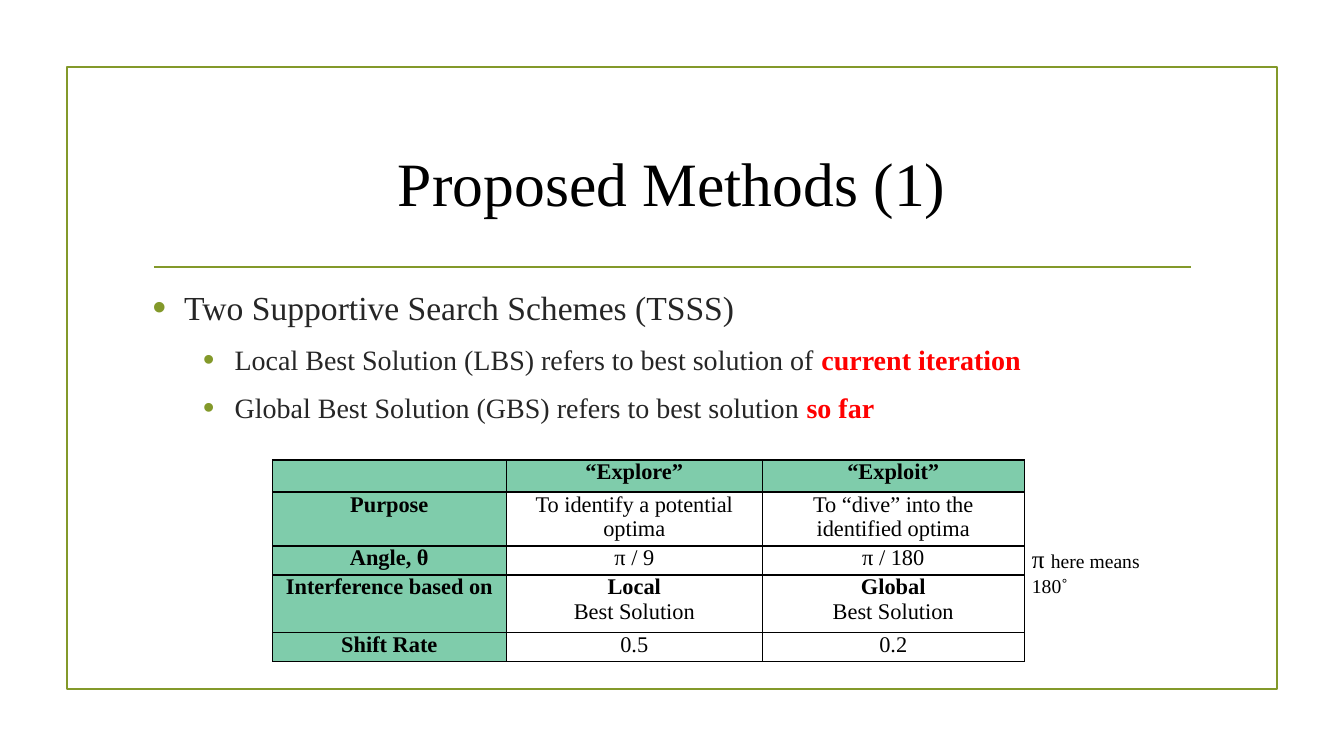
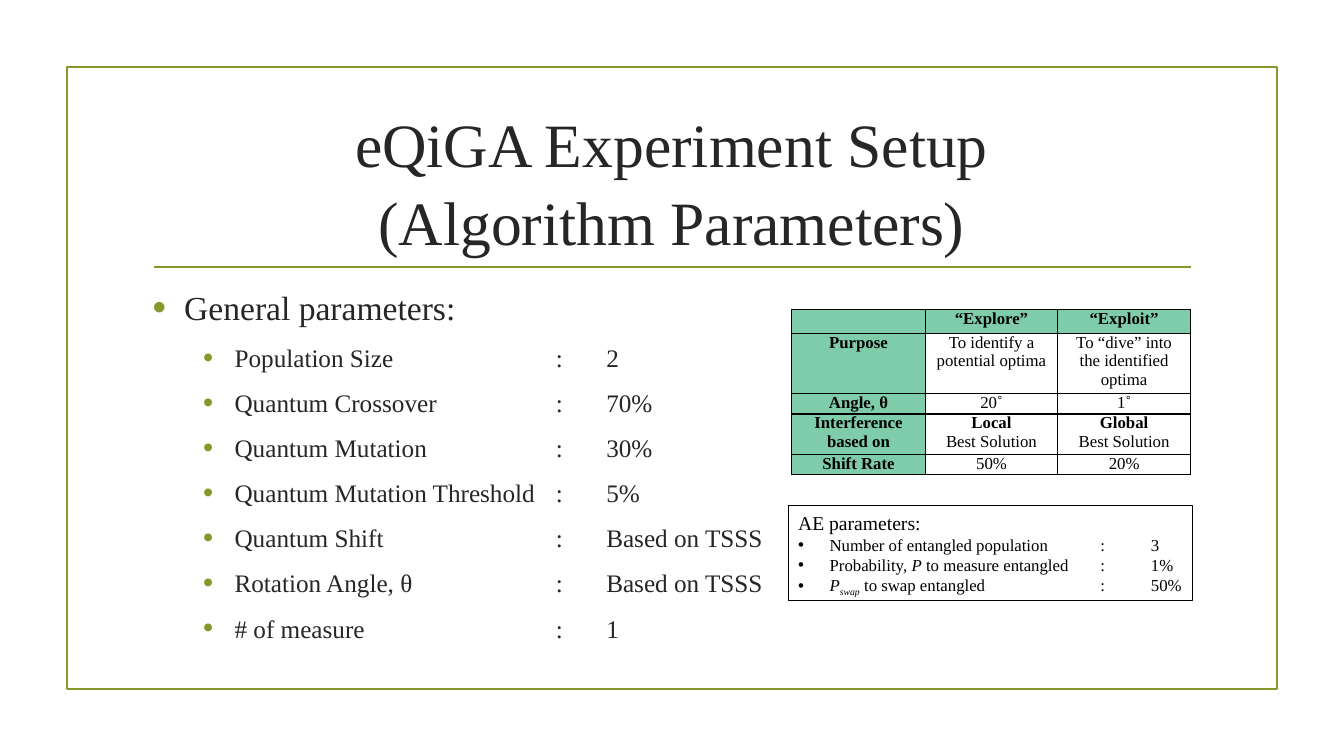
"""Builds two slides on search schemes and experiment settings."""
from lxml import etree
from pptx import Presentation
from pptx.dml.color import RGBColor
from pptx.enum.shapes import MSO_CONNECTOR, MSO_SHAPE
from pptx.enum.text import MSO_ANCHOR, PP_ALIGN
from pptx.oxml.ns import qn
from pptx.util import Pt

OLIVE = RGBColor(0x83, 0x99, 0x2A)
BLACK = RGBColor(0, 0, 0)
DARK = RGBColor(0x26, 0x26, 0x26)
RED = RGBColor(255, 0, 0)
MINT = RGBColor(0x7F, 0xCC, 0xAB)
FACE = "Times New Roman"
CENTER, LEFT = PP_ALIGN.CENTER, PP_ALIGN.LEFT
MIDDLE, TOP = MSO_ANCHOR.MIDDLE, MSO_ANCHOR.TOP
RECT, STRAIGHT = MSO_SHAPE.RECTANGLE, MSO_CONNECTOR.STRAIGHT
STEP = 22.5
BOLD, ITALIC = {"bold": True}, {"italic": True}
ALERT = {"bold": True, "color": RED}


def sub(root, tag, **attrs):
    node = etree.SubElement(root, qn(tag))
    for key, val in attrs.items():
        node.set(key, str(val))
    return node


class Deck:
    def __init__(self):
        self.prs = Presentation()
        self.prs.slide_width, self.prs.slide_height = Pt(960), Pt(540)
        self.slide = None

    def page(self, title, color):
        self.slide = self.prs.slides.add_slide(self.prs.slide_layouts[6])
        self.frame(48, 48, 864, 444, OLIVE, 1.25)
        rule = self.slide.shapes.add_connector(
            STRAIGHT, Pt(110), Pt(190.8), Pt(850.5), Pt(190.8))
        rule.line.color.rgb, rule.line.width = OLIVE, Pt(1.25)
        sub(rule._element.spPr, "a:effectLst")
        para = self.text(102, 77, 756, 103, MIDDLE).paragraphs[0]
        para.line_spacing = 1.05
        self.fill(para, [title], 44, color, CENTER)

    def frame(self, x, y, w, h, color, width):
        box = self.slide.shapes.add_shape(RECT, Pt(x), Pt(y), Pt(w), Pt(h))
        box.shadow.inherit = False
        box.fill.background()
        box.line.color.rgb, box.line.width = color, Pt(width)
        box.text_frame.vertical_anchor = TOP
        return box.text_frame

    def text(self, x, y, w, h, anchor=TOP):
        box = self.slide.shapes.add_textbox(Pt(x), Pt(y), Pt(w), Pt(h))
        box.text_frame.word_wrap = True
        box.text_frame.vertical_anchor = anchor
        return box.text_frame

    def fill(self, para, parts, size, color, align=LEFT, bold=None):
        para.alignment = align
        font = para.font
        font.name, font.size, font.color.rgb = FACE, Pt(size), color
        font.bold = bold
        for part in parts:
            words, look = (part, {}) if isinstance(part, str) else part
            for i, line in enumerate(words.split("\n")):
                if i:
                    para.add_line_break()
                if line:
                    self.style(para.add_run(), line, **look)

    def style(self, run, words, bold=None, italic=None, color=None,
              size=None, base=None):
        run.text = words
        run.font.bold, run.font.italic = bold, italic
        if color is not None:
            run.font.color.rgb = color
        if size:
            run.font.size = Pt(size)
        if base:
            run._r.get_or_add_rPr().set("baseline", str(base))

    def bullet(self, para, left, color=None, scale=100):
        ppr = para._p.get_or_add_pPr()
        ppr.set("marL", str(Pt(left)))
        ppr.set("indent", str(-Pt(STEP)))
        if color is not None:
            sub(sub(ppr, "a:buClr"), "a:srgbClr", val=color)
        sub(ppr, "a:buSzPct", val=scale * 1000)
        sub(ppr, "a:buFont", typeface="Arial")
        sub(ppr, "a:buChar", char="•")

    def body(self, head, items, size):
        frame = self.text(102, 201.6, 756, 261.4)
        para = frame.paragraphs[0]
        self.bullet(para, STEP, OLIVE, 115)
        para.space_after = Pt(6)
        self.fill(para, [head], 24, DARK)
        for item in items:
            para = frame.add_paragraph()
            self.bullet(para, STEP + 36, OLIVE, 115)
            para.space_before, para.space_after = Pt(4.6), Pt(6)
            self.fill(para, item, size, DARK)

    def panel(self, head, items):
        frame = self.frame(563, 361.4, 288.7, 67.7, BLACK, 0.75)
        frame.word_wrap = True
        self.fill(frame.paragraphs[0], [head], 14, BLACK)
        for item in items:
            para = frame.add_paragraph()
            self.bullet(para, STEP)
            self.fill(para, item, 12, BLACK)

    def table(self, x, y, cols, rows, size, data):
        grid = self.slide.shapes.add_table(
            len(rows), len(cols), Pt(x), Pt(y),
            Pt(sum(cols)), Pt(sum(rows))).table
        grid.first_row = grid.horz_banding = False
        for col, width in zip(grid.columns, cols):
            col.width = Pt(width)
        for r, (high, line) in enumerate(zip(rows, data)):
            grid.rows[r].height = Pt(high)
            for c, parts in enumerate(line):
                self.cell(grid.cell(r, c), parts, size, r == 0 or c == 0)

    def cell(self, cell, parts, size, head):
        cell.margin_left = cell.margin_right = Pt(5)
        cell.margin_top = cell.margin_bottom = 0
        if head:
            cell.fill.solid()
            cell.fill.fore_color.rgb = MINT
        else:
            cell.fill.background()
        tcpr = cell._tc.get_or_add_tcPr()
        for i, side in enumerate("LRTB"):
            edge = sub(tcpr, "a:ln" + side, w=Pt(1))
            sub(sub(edge, "a:solidFill"), "a:srgbClr", val=BLACK)
            tcpr.insert(i, edge)
        self.fill(cell.text_frame.paragraphs[0], parts, size, BLACK,
                  CENTER, head)


def scheme(angles, rates):
    best = [[(name, BOLD), "\nBest Solution"] for name in ("Local", "Global")]
    return [
        [[], ["“Explore”"], ["“Exploit”"]],
        [["Purpose"], ["To identify a potential optima"],
         ["To “dive” into the identified optima"]],
        [["Angle, θ"], *[[a] for a in angles]],
        [["Interference based on"], *best],
        [["Shift Rate"], *[[r] for r in rates]],
    ]


def main():
    deck = Deck()

    deck.page("Proposed Methods (1)", BLACK)
    note = deck.text(730, 384.5, 108, 29).paragraphs[0]
    deck.fill(note, [("π ", {"size": 18}), "here means 180˚"], 14, BLACK)
    deck.table(194.6, 328.5, [167, 183, 187], [23, 38.5, 20.7, 41.4, 20.7],
               16, scheme(["π / 9", "π / 180"], ["0.5", "0.2"]))
    deck.body("Two Supportive Search Schemes (TSSS)", [
        ["Local Best Solution (LBS) refers to best solution of ",
         ("current iteration", ALERT)],
        ["Global Best Solution (GBS) refers to best solution ",
         ("so far", ALERT)],
    ], 20)

    deck.page("eQiGA Experiment Setup\n(Algorithm Parameters)", DARK)
    deck.body("General parameters:", [
        ["Population Size\t\t\t\t:\t2"],
        ["Quantum Crossover\t\t\t:\t70%"],
        ["Quantum Mutation\t\t\t:\t30%"],
        ["Quantum Mutation Threshold\t:\t5%"],
        ["Quantum Shift\t\t\t\t:\tBased on TSSS"],
        ["Rotation Angle, θ\t\t\t:\tBased on TSSS"],
        ["# of measure\t\t\t\t:\t1"],
    ], 18)
    deck.table(565.5, 221.3, [95.5, 94.5, 95], [16.7, 43, 14.4, 29, 14.4],
               12, scheme(["20˚", "1˚"], ["50%", "20%"]))
    deck.panel("AE parameters:", [
        ["Number of entangled population\t\t:\t3"],
        ["Probability, ", ("P", ITALIC), " to measure entangled\t:\t1%"],
        [("P", ITALIC), ("swap", {"italic": True, "base": -25000}),
         " to swap entangled\t\t\t:\t50%"],
    ])

    deck.prs.save("out.pptx")


if __name__ == "__main__":
    main()
